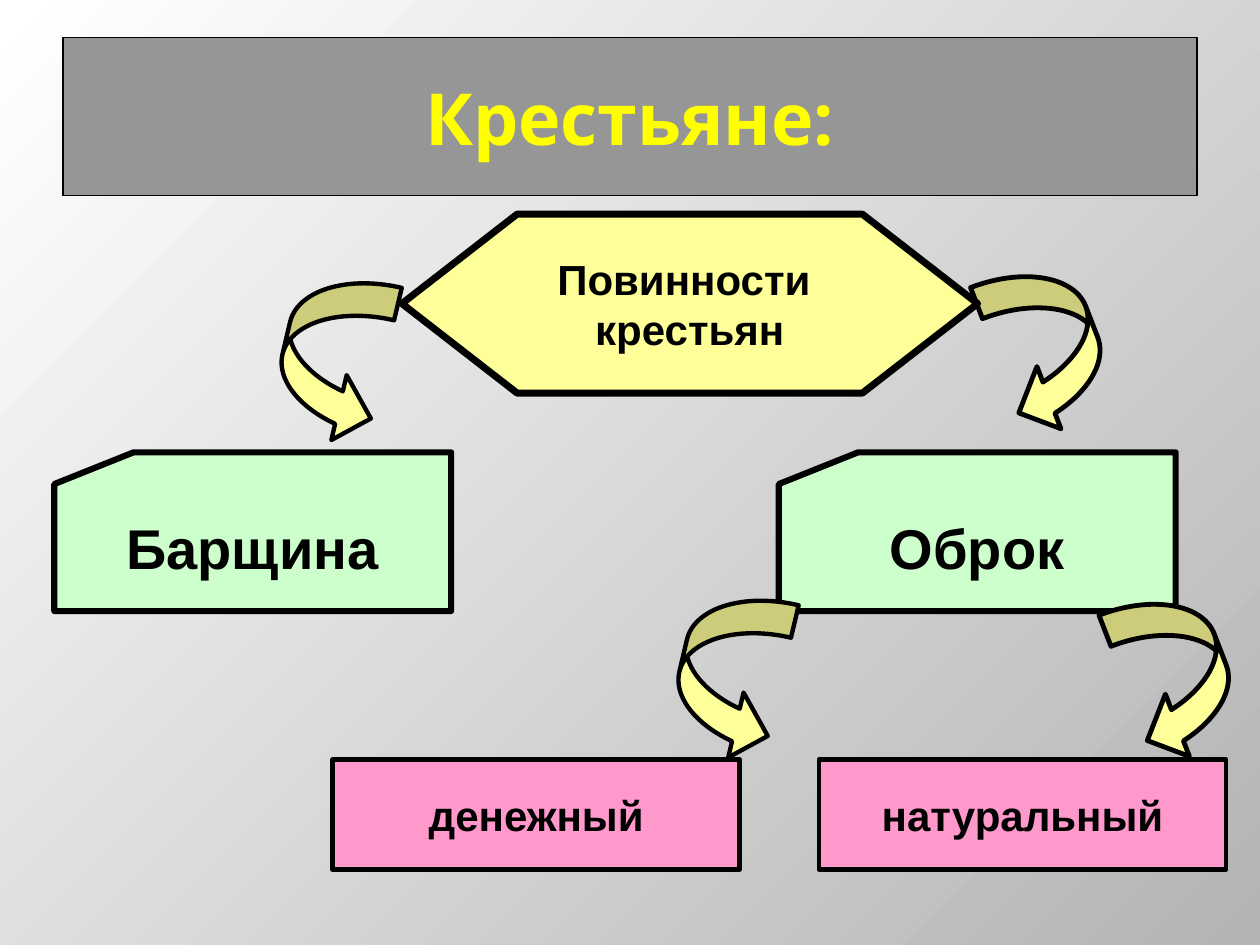
from dataclasses import dataclass

import pptx
import pptx.dml.color
import pptx.enum.shapes
import pptx.enum.text
import pptx.oxml
import pptx.oxml.ns
import pptx.util

Pt = pptx.util.Pt
SHAPE = pptx.enum.shapes.MSO_SHAPE


@dataclass(frozen=True)
class Theme:
    paper: str = "FFFFFF"
    paper_edge: str = "B4B4B4"
    banner: str = "969696"
    heading: str = "FFFF00"
    ink: str = "000000"
    yellow: str = "FFFF99"
    green: str = "CCFFCC"
    pink: str = "FF99CC"
    heading_font: str = "Open Sans"
    body_font: str = "Arial"
    heading_size: float = 41
    large: float = 32
    medium: float = 24


THEME = Theme()


def rgb(value):
    return pptx.dml.color.RGBColor.from_string(value)


def paint_background(page):
    """Shade the page from its top left corner outwards."""
    fill = page.background.fill
    fill.gradient()
    for stop, color, position in zip(
        fill.gradient_stops, (THEME.paper, THEME.paper_edge), (0, 1)
    ):
        stop.color.rgb = rgb(color)
        stop.position = position
    line = page.element.xpath("./p:cSld/p:bg//a:gradFill/a:lin")[0]
    corner = pptx.oxml.parse_xml(
        f'<a:path {pptx.oxml.ns.nsdecls("a")} path="circle">'
        '<a:fillToRect r="100000" b="100000"/></a:path>'
    )
    line.getparent().replace(line, corner)


def add_block(page, kind, box, fill, weight):
    block = page.shapes.add_shape(kind, *(Pt(length) for length in box))
    block.shadow.inherit = False
    block.fill.solid()
    block.fill.fore_color.rgb = rgb(fill)
    block.line.color.rgb = rgb(THEME.ink)
    block.line.width = Pt(weight)
    return block


def write(block, text, size, font=THEME.body_font, color=THEME.ink, wrap=False):
    """Centre bold text in a block, one paragraph for each line."""
    frame = block.text_frame
    frame.word_wrap = wrap
    frame.vertical_anchor = pptx.enum.text.MSO_ANCHOR.MIDDLE
    for index, line in enumerate(text.split("\n")):
        para = frame.add_paragraph() if index else frame.paragraphs[0]
        para.alignment = pptx.enum.text.PP_ALIGN.CENTER
        span = para.add_run()
        span.text = line
        span.font.name = font
        span.font.size = Pt(size)
        span.font.bold = True
        span.font.color.rgb = rgb(color)


def add_title(page, box, text):
    banner = add_block(page, SHAPE.RECTANGLE, box, THEME.banner, 0.75)
    write(banner, text, THEME.heading_size, THEME.heading_font, THEME.heading, True)


def add_topic(page, box, text):
    topic = add_block(page, SHAPE.FLOWCHART_PREPARATION, box, THEME.yellow, 4)
    write(topic, text, THEME.medium)


def add_duty(page, box, text):
    duty = add_block(page, SHAPE.FLOWCHART_CARD, box, THEME.green, 3.5)
    write(duty, text, THEME.large)


def add_payment(page, box, text):
    payment = add_block(page, SHAPE.FLOWCHART_PROCESS, box, THEME.pink, 2.75)
    write(payment, text, THEME.medium)


def add_curl(page, box, to_left):
    """Add a curved arrow that swings down on the left or right side."""
    kind, turn, weight = (
        (SHAPE.CURVED_UP_ARROW, 103.3, 2.5)
        if to_left
        else (SHAPE.CURVED_DOWN_ARROW, 68.9, 2.75)
    )
    curl = add_block(page, kind, box, THEME.yellow, weight)
    curl.rotation = turn
    for index, value in enumerate((0.331, 0.662, 0.333)):
        curl.adjustments[index] = value


def build_page(page):
    paint_background(page)
    add_title(page, (36, 21.6, 648, 90), "Крестьяне:")

    curl_size = (95.8, 57.6)
    add_curl(page, (550.8, 169.9, *curl_size), to_left=False)
    add_curl(page, (142.6, 175.7, *curl_size), to_left=True)
    add_topic(page, (229.7, 122.4, 329, 102.2), "Повинности \nкрестьян")

    for left, text in ((31, "Барщина"), (445, "Оброк")):
        add_duty(page, (left, 258.5, 226.8, 90.7), text)

    add_curl(page, (369.4, 357.1, *curl_size), to_left=True)
    add_curl(page, (624.2, 357.1, *curl_size), to_left=False)
    for left, text in ((190.1, "денежный"), (468, "натуральный")):
        add_payment(page, (left, 434.2, 232.6, 62.6), text)


def main():
    deck = pptx.Presentation()
    deck.slide_width, deck.slide_height = Pt(720), Pt(540)
    build_page(deck.slides.add_slide(deck.slide_layouts[6]))
    deck.save("out.pptx")


if __name__ == "__main__":
    main()
